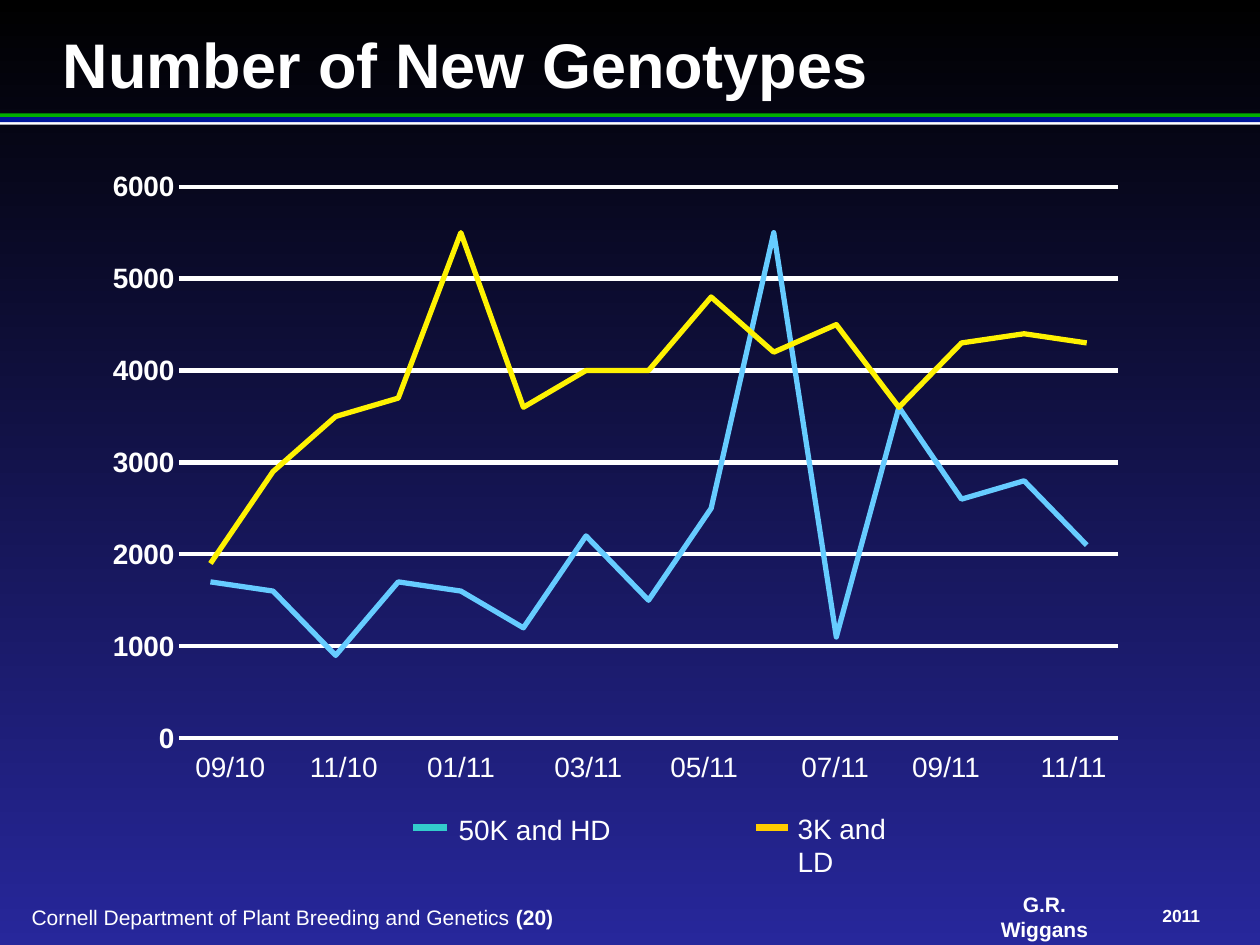
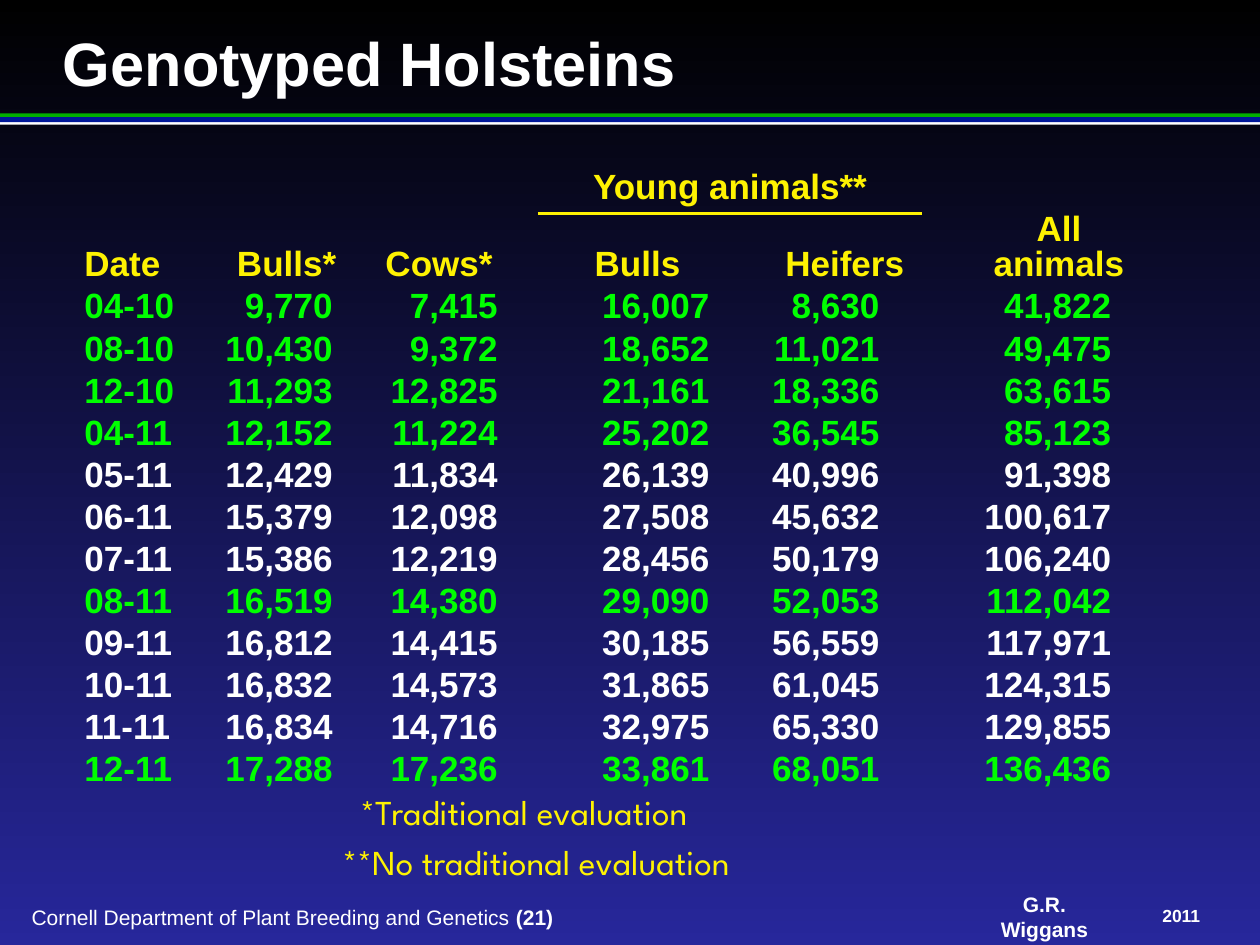
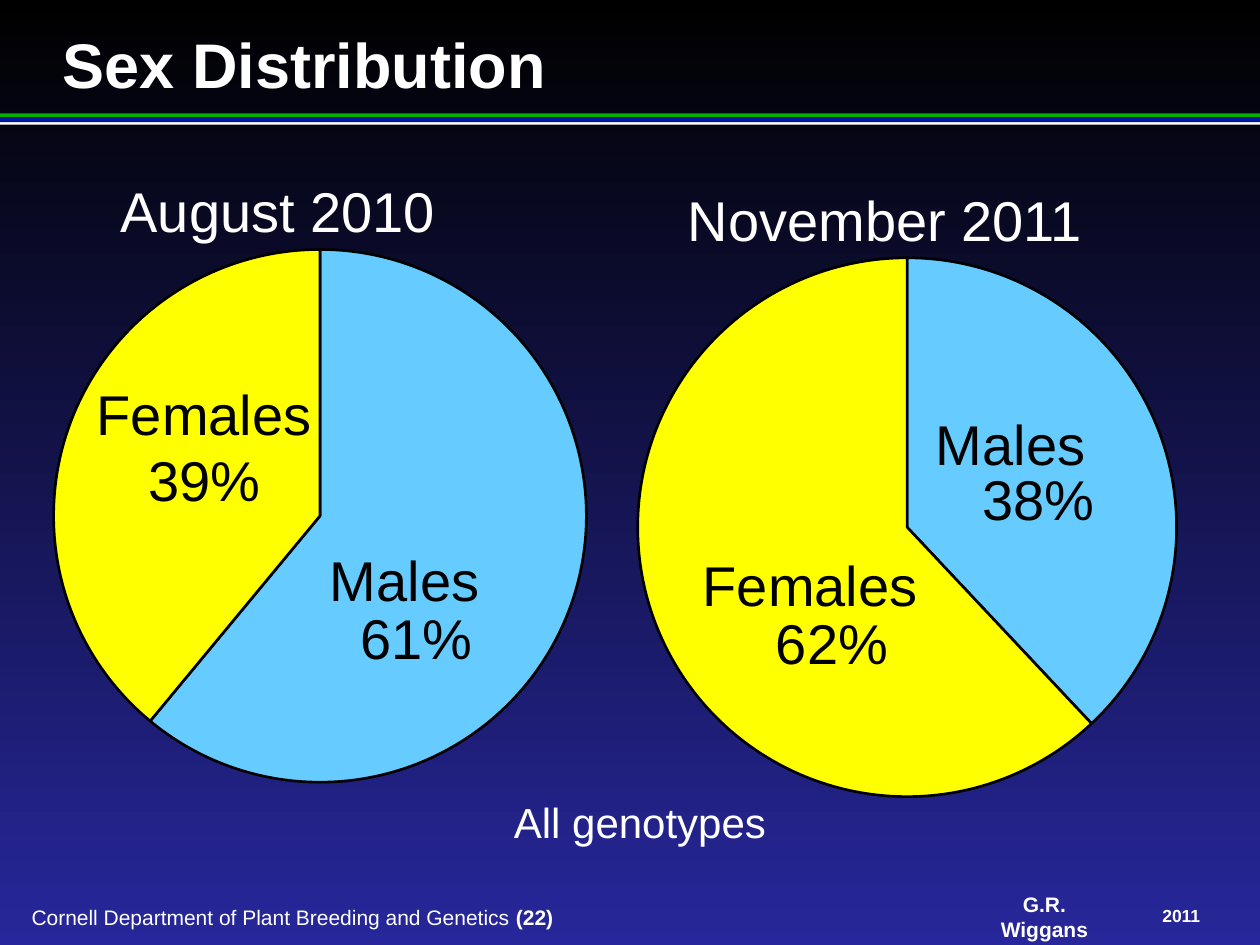
from dataclasses import dataclass
from typing import Any

import pptx
import pptx.chart.data
import pptx.dml.color
import pptx.enum.chart
import pptx.enum.shapes
import pptx.enum.text
import pptx.oxml
import pptx.oxml.ns
import pptx.util

# The slide is a grid of 100 columns by 75 rows of square cells.
COLUMNS, ROWS = 100, 75
CELL = pptx.util.Inches(0.1)
FONT = "Arial"
NO_GRID_STYLE = "{2D5ABB26-0587-4C30-8999-92F81FD0307C}"
COLORS = {
    "white": "FFFFFF", "black": "000000", "night": "27279B",
    "green band": "01AF00", "blue band": "001799",
    "heading": "FEF202", "release": "00FF00",
    "sky": "66CCFF", "sun": "FFFF00", "teal": "33CCCC", "amber": "FFCC00",
}
ALIGN = pptx.enum.text.PP_ALIGN
ANCHOR = pptx.enum.text.MSO_ANCHOR
CHART = pptx.enum.chart.XL_CHART_TYPE


@dataclass
class Area:
    left: float
    top: float
    width: float
    height: float

    def emu(self) -> list[int]:
        return [grid(n) for n in (self.left, self.top, self.width, self.height)]


@dataclass
class Label:
    text: str
    area: Area
    size: float = 16
    color: str = "white"
    bold: bool = False
    align: Any = ALIGN.LEFT
    anchor: Any = ANCHOR.TOP
    inset: tuple[float, float] = (0, 0)
    font: str = FONT


@dataclass
class LegendKey:
    text: str
    color: str
    start: float
    end: float
    area: Area


@dataclass
class Pie:
    values: tuple[int, int]
    area: Area
    plot: tuple[float, float, float, float]


@dataclass
class Column:
    width: float
    heading: str = ""
    heading_inset: float = 0
    number_inset: float = 0


def grid(cells: float) -> int:
    return round(cells * CELL)


def rgb(name: str) -> pptx.dml.color.RGBColor:
    return pptx.dml.color.RGBColor.from_string(COLORS[name])


def apply(target: Any, values: dict[str, Any]) -> None:
    for name, value in values.items():
        setattr(target, name, value)


def style_font(font: Any, size: float, color: str, bold: bool = False,
               name: str = FONT) -> None:
    apply(font, {"size": pptx.util.Pt(size), "bold": bold, "name": name})
    font.color.rgb = rgb(color)


def style_line(line: Any, color: str, width: float) -> None:
    line.color.rgb = rgb(color)
    line.width = pptx.util.Pt(width)


def add_span(para: Any, text: str, *style: Any) -> None:
    span = para.add_run()
    span.text = text
    style_font(span.font, *style)


def add_label(page: Any, label: Label) -> Any:
    """Draw a label and return its first paragraph."""
    frame = page.shapes.add_textbox(*label.area.emu()).text_frame
    across, down = (grid(n) for n in label.inset)
    apply(frame, {"word_wrap": True, "vertical_anchor": label.anchor,
                  "margin_left": across, "margin_right": across,
                  "margin_top": down, "margin_bottom": down})
    para = frame.paragraphs[0]
    para.alignment = label.align
    add_span(para, label.text, label.size, label.color, label.bold, label.font)
    return para


def add_page(deck: Any, title: str, number: int, title_size: float = 36) -> Any:
    """Start a page with the shared background, bands, title and footer."""
    page = deck.slides.add_slide(deck.slide_layouts[6])
    fill = page.background.fill
    fill.gradient()
    fill.gradient_angle = 270
    for stop, color in zip(fill.gradient_stops, ("black", "night")):
        stop.color.rgb = rgb(color)
    for color, top, height in (("green band", 9, 0.3), ("white", 9.6, 0.3),
                               ("blue band", 9.3, 0.4)):
        band = page.shapes.add_shape(pptx.enum.shapes.MSO_SHAPE.RECTANGLE,
                                     *Area(0, top, COLUMNS, height).emu())
        band.shadow.inherit = False
        band.fill.solid()
        band.fill.fore_color.rgb = rgb(color)
        band.line.fill.background()
    add_label(page, Label(title, Area(5, 2, 90, 6), title_size, bold=True))
    for text, area, size in (("G.R. Wiggans", Area(77.6, 71.75, 10.6, 2), 12),
                             ("2011", Area(90.7, 71.8, 6.1, 1.7), 10)):
        add_label(page, Label(text, area, size, bold=True,
                              align=ALIGN.CENTER, anchor=ANCHOR.MIDDLE))
    footer = add_label(page, Label("Cornell Department of Plant Breeding and Genetics ",
                                   Area(2.5, 71.8, 52.2, 2), 12, anchor=ANCHOR.MIDDLE))
    add_span(footer, f"({number})", 12, "white", True)
    return page


def add_chart(page: Any, kind: Any, area: Area, series: list[tuple[int, ...]],
              plot: tuple[float, float, float, float]) -> Any:
    """Add a bare chart whose plot takes the given shares of its frame."""
    data = pptx.chart.data.CategoryChartData()
    data.categories = [str(n + 1) for n in range(len(series[0]))]
    for number, values in enumerate(series, 1):
        data.add_series(f"Series {number}", values)
    chart = page.shapes.add_chart(kind, *area.emu(), data).chart
    apply(chart, {"has_title": False, "has_legend": False})
    style_font(chart.font, 16, "white")
    chart.plots[0].vary_by_categories = False
    plot_area = chart._chartSpace.chart.plotArea
    for old in plot_area.findall(pptx.oxml.ns.qn("c:layout")):
        plot_area.remove(old)
    parts = "".join(f'<c:{tag} val="{share}"/>' for tag, share in zip("xywh", plot))
    plot_area.insert(0, pptx.oxml.parse_xml(
        f'<c:layout {pptx.oxml.ns.nsdecls("c")}><c:manualLayout>'
        '<c:layoutTarget val="inner"/><c:xMode val="edge"/><c:yMode val="edge"/>'
        f'{parts}</c:manualLayout></c:layout>'))
    return chart


GENOTYPES = {
    "sky": (1700, 1600, 900, 1700, 1600, 1200, 2200, 1500, 2500, 5500, 1100, 3600,
            2600, 2800, 2100),
    "heading": (1900, 2900, 3500, 3700, 5500, 3600, 4000, 4000, 4800, 4200, 4500,
                3600, 4300, 4400, 4300),
}
MONTHS = {"09/10": 15.5, "11/10": 24.6, "01/11": 33.9, "03/11": 44,
          "05/11": 53.2, "07/11": 63.6, "09/11": 72.4, "11/11": 82.6}
LEGEND = [
    LegendKey("50K and HD", "teal", 32.8, 35.5, Area(36.4, 64.5, 12.6, 2.7)),
    LegendKey("3K and LD", "amber", 60, 62.5, Area(63.3, 64.4, 10.4, 2.7)),
]


def draw_new_genotypes(deck: Any) -> None:
    page = add_page(deck, "Number of New Genotypes", 20)
    chart = add_chart(page, CHART.LINE, Area(7.6, 12.9, 82.8, 48.1),
                      list(GENOTYPES.values()), (0.08, 0.04, 0.9, 0.91))
    chart.category_axis.visible = False
    axis = chart.value_axis
    tick = pptx.enum.chart.XL_TICK_MARK.NONE
    apply(axis, {"minimum_scale": 0, "maximum_scale": 6000, "major_unit": 1000,
                 "major_tick_mark": tick, "minor_tick_mark": tick,
                 "has_major_gridlines": True})
    axis.format.line.fill.background()
    style_line(axis.major_gridlines.format.line, "white", 2.5)
    style_font(axis.tick_labels.font, 16, "white", True)
    for series, color in zip(chart.plots[0].series, GENOTYPES):
        series.smooth = False
        series.marker.style = pptx.enum.chart.XL_MARKER_STYLE.NONE
        style_line(series.format.line, color, 3)
    for month, left in MONTHS.items():
        add_label(page, Label(month, Area(left, 59.5, 6, 2.7)))
    for key in LEGEND:
        swatch = page.shapes.add_connector(
            pptx.enum.shapes.MSO_CONNECTOR.STRAIGHT,
            *(grid(n) for n in (key.start, 65.7, key.end, 65.7)))
        style_line(swatch.line, key.color, 4)
        swatch._element.spPr.append(pptx.oxml.parse_xml(
            f'<a:effectLst {pptx.oxml.ns.nsdecls("a")}/>'))
        add_label(page, Label(key.text, key.area))


HOLSTEIN_COLUMNS = [
    Column(11, "Date"),
    Column(10.1, "Bulls*", 0, 1.4),
    Column(14.9, "Cows*", 0.8, 3.2),
    Column(18.3, "Bulls", 2.5, 4.7),
    Column(12.2, "Heifers", 0.1, 3.4),
    Column(4.8),
    Column(12.1, "All animals", 0, 1.9),
]
HOLSTEINS = [
    ("04-10", "9,770", "7,415", "16,007", "8,630", "", "41,822"),
    ("08-10", "10,430", "9,372", "18,652", "11,021", "", "49,475"),
    ("12-10", "11,293", "12,825", "21,161", "18,336", "", "63,615"),
    ("04-11", "12,152", "11,224", "25,202", "36,545", "", "85,123"),
    ("05-11", "12,429", "11,834", "26,139", "40,996", "", "91,398"),
    ("06-11", "15,379", "12,098", "27,508", "45,632", "", "100,617"),
    ("07-11", "15,386", "12,219", "28,456", "50,179", "", "106,240"),
    ("08-11", "16,519", "14,380", "29,090", "52,053", "", "112,042"),
    ("09-11", "16,812", "14,415", "30,185", "56,559", "", "117,971"),
    ("10-11", "16,832", "14,573", "31,865", "61,045", "", "124,315"),
    ("11-11", "16,834", "14,716", "32,975", "65,330", "", "129,855"),
    ("12-11", "17,288", "17,236", "33,861", "68,051", "", "136,436"),
]
RELEASES = {"04-10", "08-10", "12-10", "04-11", "08-11", "12-11"}
ROW_HEIGHTS = [3.7, 5.8] + [3.25] * 8 + [3.1] * 4
MERGES = [(0, 0, 1, 0), (0, 1, 0, 2), (0, 3, 0, 4), (0, 5, 1, 5), (0, 6, 1, 6),
          (10, 5, 13, 5)]


def write_cell(cell: Any, text: str, color: str, align: Any, right: float = 0,
               bottom: float = 0) -> None:
    apply(cell, {"margin_right": grid(right), "margin_bottom": grid(bottom),
                 "vertical_anchor": ANCHOR.BOTTOM if bottom else ANCHOR.TOP})
    para = cell.text_frame.paragraphs[0]
    para.alignment = align
    add_span(para, text, 20, color, True)


def set_border(cell: Any, side: str, shown: bool) -> None:
    """Show or clear the yellow border on one side of a cell."""
    paint = (f'<a:solidFill><a:srgbClr val="{COLORS["heading"]}"/></a:solidFill>'
             if shown else "<a:noFill/>")
    width = pptx.util.Pt(2.25) if shown else 0
    cell._tc.get_or_add_tcPr().insert(0, pptx.oxml.parse_xml(
        f'<a:{side} {pptx.oxml.ns.nsdecls("a")} w="{width}">{paint}</a:{side}>'))


def draw_holsteins(deck: Any) -> None:
    page = add_page(deck, "Genotyped Holsteins", 21, 35)
    width = sum(column.width for column in HOLSTEIN_COLUMNS)
    table = page.shapes.add_table(
        len(ROW_HEIGHTS), len(HOLSTEIN_COLUMNS),
        *Area(6.7, 13.1, width, sum(ROW_HEIGHTS)).emu()).table
    apply(table, {"first_row": False, "horz_banding": False})
    table._tbl.tblPr.find(pptx.oxml.ns.qn("a:tableStyleId")).text = NO_GRID_STYLE
    for row, height in zip(table.rows, ROW_HEIGHTS):
        row.height = grid(height)
    for cell in table.iter_cells():
        cell.fill.background()
        apply(cell, dict.fromkeys(("margin_left", "margin_right", "margin_top",
                                   "margin_bottom"), 0))
    for top, left, bottom, right in MERGES:
        table.cell(top, left).merge(table.cell(bottom, right))

    write_cell(table.cell(0, 3), "Young animals**", "heading", ALIGN.CENTER, bottom=0.5)
    for index, column in enumerate(HOLSTEIN_COLUMNS):
        table.columns[index].width = grid(column.width)
        if column.heading:
            cell = table.cell(0 if index in (0, 6) else 1, index)
            write_cell(cell, column.heading, "heading",
                       ALIGN.CENTER if index else ALIGN.LEFT, column.heading_inset, 0.3)
    table.cell(0, 6).text_frame.paragraphs[0].line_spacing = pptx.util.Pt(20)
    for index in (3, 4):
        for row, side, shown in ((0, "lnB", True), (1, "lnB", False),
                                 (1, "lnT", True), (2, "lnT", False)):
            set_border(table.cell(row, index), side, shown)

    for row, record in enumerate(HOLSTEINS, 2):
        color = "release" if record[0] in RELEASES else "white"
        for index, (column, text) in enumerate(zip(HOLSTEIN_COLUMNS, record)):
            if text:
                write_cell(table.cell(row, index), text, color,
                           ALIGN.RIGHT if index else ALIGN.LEFT, column.number_inset)

    note_font = "League Spartan"
    first = add_label(page, Label("*Traditional evaluation", Area(27.2, 62.7, 46, 7.5),
                                  20, "heading", font=note_font))
    first._p.get_or_add_pPr().set("marL", str(grid(1.4)))
    second = first._parent.add_paragraph()
    second.space_before = pptx.util.Pt(5)
    add_span(second, "**No traditional evaluation", 20, "heading", False, note_font)


PIES = [
    Pie((61, 39), Area(-8.7, 18.3, 68.2, 45.3), (0.19, 0.03, 0.62, 0.94)),
    Pie((38, 62), Area(39.5, 19.1, 65, 45.5), (0.17, 0.03, 0.66, 0.94)),
]
PIE_LABELS = [
    ("Females", 6.7, 29.6, "black"), ("39%", 10.8, 34.9, "black"),
    ("Males", 25.2, 42.8, "black"), ("61%", 27.6, 47.4, "black"),
    ("Males", 73.3, 32, "black"), ("38%", 77, 36.4, "black"),
    ("Females", 54.8, 43.2, "black"), ("62%", 60.6, 47.8, "black"),
    ("August 2010", 8.6, 13.5, "white"), ("November 2011", 53.6, 14.2, "white"),
]
LABEL_WIDTHS = {"Females": 26.6, "Males": 23.8, "August 2010": 30.4,
                "November 2011": 36.9}
PERCENT_WIDTH = 20
LABEL_INSET = (1, 0.5)


def draw_sex_distribution(deck: Any) -> None:
    page = add_page(deck, "Sex Distribution", 22)
    for pie in PIES:
        chart = add_chart(page, CHART.PIE, pie.area, [pie.values], pie.plot)
        series = chart.plots[0].series[0]
        for index, color in enumerate(("sky", "sun")):
            slice_format = series.points[index].format
            slice_format.fill.solid()
            slice_format.fill.fore_color.rgb = rgb(color)
            style_line(slice_format.line, "black", 1.5)
    for text, left, top, color in PIE_LABELS:
        area = Area(left, top, LABEL_WIDTHS.get(text, PERCENT_WIDTH), 6.4)
        add_label(page, Label(text, area, 32, color, inset=LABEL_INSET))
    add_label(page, Label("All genotypes", Area(39.8, 62.7, 40, 5.1), 24,
                          inset=LABEL_INSET))


def main() -> None:
    deck = pptx.Presentation()
    apply(deck, {"slide_width": grid(COLUMNS), "slide_height": grid(ROWS)})
    draw_new_genotypes(deck)
    draw_holsteins(deck)
    draw_sex_distribution(deck)
    deck.save("out.pptx")


if __name__ == "__main__":
    main()
